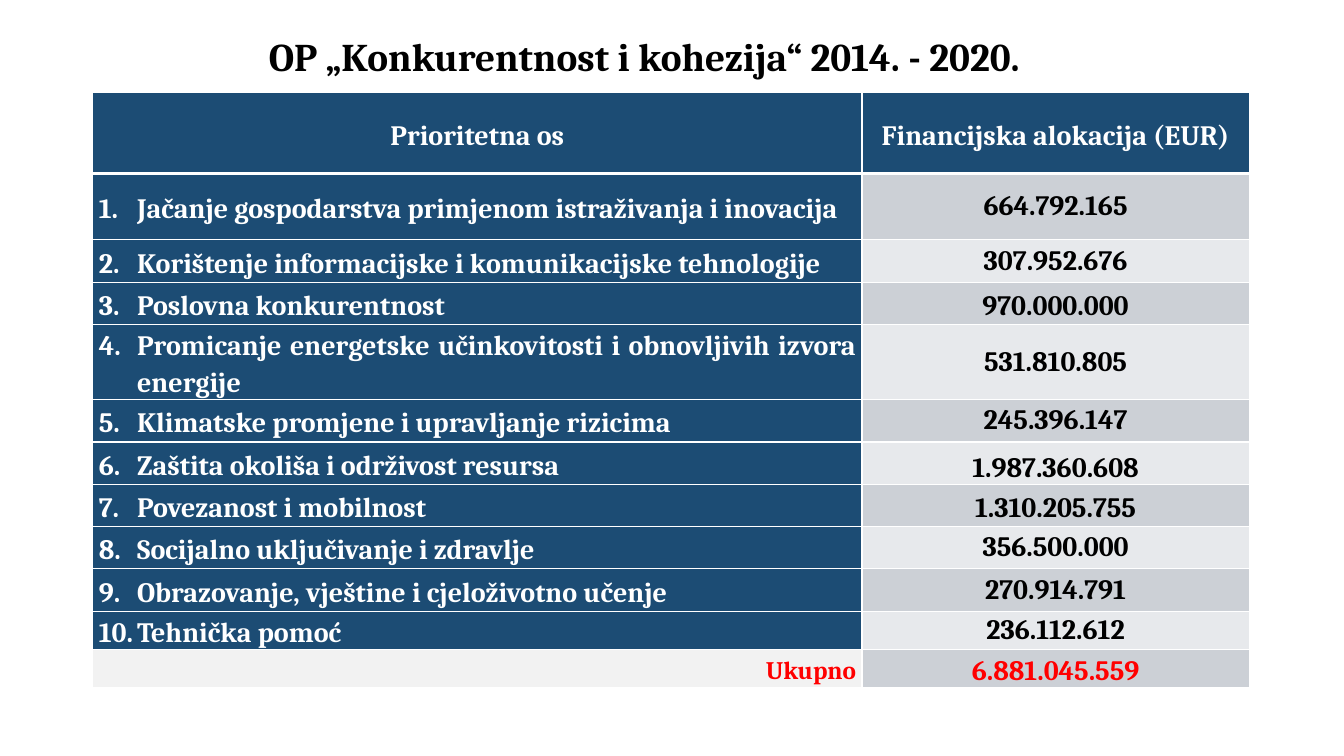
import pptx
import pptx.util
import pptx.dml.color
import pptx.enum.text
import pptx.oxml
import pptx.oxml.ns
import lxml.etree

Inches, Pt = pptx.util.Inches, pptx.util.Pt
ALIGN, ANCHOR = pptx.enum.text.PP_ALIGN, pptx.enum.text.MSO_ANCHOR
NAVY, WHITE, BLACK, RED = "1C4C74", "FFFFFF", "000000", "FF0000"
BANDS = ["CCD0D6", "E7E9EC"]


def rgb(value):
    return pptx.dml.color.RGBColor.from_string(value)


def write(tf, text, color, size, align, spacing):
    p = tf.paragraphs[0]
    p.alignment, p.line_spacing = align, spacing
    r = p.add_run()
    r.text = text
    for name, value in {"name": "Cambria", "size": Pt(size), "bold": True}.items():
        setattr(r.font, name, value)
    r.font.color.rgb = rgb(color)
    return p


prs = pptx.Presentation()
prs.slide_width, prs.slide_height = Inches(13.33), Inches(7.5)
s = prs.slides.add_slide(prs.slide_layouts[5])

# Title
title = s.shapes.title
title.left, title.top = Inches(1.81), Inches(0.08)
title.width, title.height = Inches(9.16), Inches(1)
title.text_frame.vertical_anchor = ANCHOR.MIDDLE
write(title.text_frame, "OP „Konkurentnost i kohezija“ 2014. - 2020.", BLACK, 28, ALIGN.CENTER, 0.9)

# Table content: priority axis, allocation
axes = [
    ("Jačanje gospodarstva primjenom istraživanja i inovacija", "664.792.165"),
    ("Korištenje informacijske i komunikacijske tehnologije", "307.952.676"),
    ("Poslovna konkurentnost", "970.000.000"),
    ("Promicanje energetske učinkovitosti i obnovljivih izvora energije", "531.810.805"),
    ("Klimatske promjene i upravljanje rizicima", "245.396.147"),
    ("Zaštita okoliša i održivost resursa", "1.987.360.608"),
    ("Povezanost i mobilnost", "1.310.205.755"),
    ("Socijalno uključivanje i zdravlje", "356.500.000"),
    ("Obrazovanje, vještine i cjeloživotno učenje", "270.914.791"),
    ("Tehnička pomoć", "236.112.612"),
]
rows = [("Prioritetna os", "Financijska alokacija (EUR)"), *axes, ("Ukupno", "6.881.045.559")]
total = len(rows) - 1
padded_amounts = (0, 3, 7, total)
heights = {0: 0.8, 1: 0.66, 4: 0.66, 10: 0.34, 11: 0.34}

# Table grid
table = s.shapes.add_table(len(rows), 2, Inches(0.92), Inches(0.92), Inches(11.47), Inches(5.74)).table
for col, width in zip(table.columns, (7.63, 3.84)):
    col.width = Inches(width)
for i, row in enumerate(table.rows):
    row.height = Inches(heights.get(i, 0.42))

# Cells
for i, texts in enumerate(rows):
    for j, text in enumerate(texts):
        cell = table.cell(i, j)
        padded = j == 0 or i in padded_amounts
        side, top = (0.06, 0.01) if padded else (0, 0)
        cell.margin_left = cell.margin_right = Inches(side)
        cell.margin_top, cell.margin_bottom = Inches(top), 0
        cell.vertical_anchor = ANCHOR.BOTTOM if (i, j) == (6, 1) else ANCHOR.MIDDLE

        # White borders, thicker under the header
        for edge in "LRTB":
            thick = (i, edge) in ((0, "B"), (1, "T"))
            cell._tc.get_or_add_tcPr().append(pptx.oxml.parse_xml(
                f'<a:ln{edge} {pptx.oxml.ns.nsdecls("a")} w="{Pt(3 if thick else 1)}">'
                f'<a:solidFill><a:srgbClr val="{WHITE}"/></a:solidFill></a:ln{edge}>'))

        # Colours and alignment by row and column
        fill, color, align, size = NAVY, WHITE, ALIGN.CENTER, 20
        if i == total:
            color = RED
            if j == 0:
                fill, align, size = "F2F2F2", ALIGN.RIGHT, 18
        elif i > 0 and j == 0:
            align = ALIGN.JUSTIFY if i < 9 else ALIGN.LEFT
        elif i > 0:
            color = BLACK
        if i > 0 and j == 1:
            fill = BANDS[(i - 1) % 2]
        cell.fill.solid()
        cell.fill.fore_color.rgb = rgb(fill)
        p = write(cell.text_frame, text, color, size, align, 1.15 if padded else 1.0)

        # Numbering of the axes
        if j == 0 and 0 < i < total:
            pPr = p._p.get_or_add_pPr()
            pPr.set("marL", str(Inches(0.38)))
            pPr.set("indent", str(-Inches(0.38)))
            for tag, attrs in (("a:buFont", {"typeface": "+mj-lt"}),
                               ("a:buAutoNum", {"type": "arabicPeriod", "startAt": str(i)})):
                lxml.etree.SubElement(pPr, pptx.oxml.ns.qn(tag), attrs)

prs.save("out.pptx")
